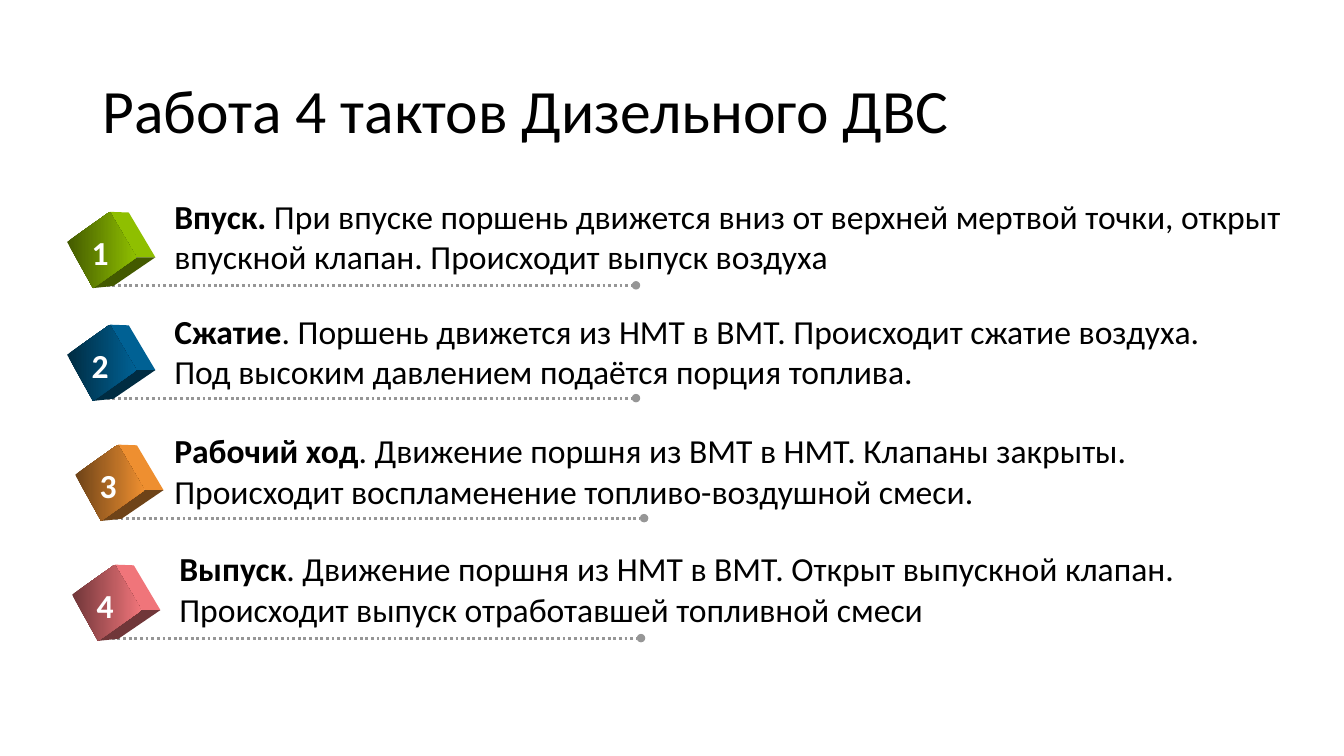
import pptx
import pptx.dml.color
import pptx.enum.dml
import pptx.enum.shapes
import pptx.enum.text
import pptx.oxml
import pptx.oxml.ns
import pptx.util

Pt = pptx.util.Pt

COLORS = {
    "text": "000000",
    "number": "FFFFFF",
    "line": "969696",
    "green": "8FBF00",
    "green dark": "435A00",
    "blue": "006194",
    "blue dark": "002C42",
    "orange": "EE8F30",
    "orange dark": "6E4318",
    "pink": "F0757A",
    "pink dark": "703639",
}

CUBE_FRONT = [(0, 22), (30.5, 0.5), (49.5, 33), (18.5, 55)]
CUBE_SIDE = [(30.5, 0.5), (44, 1), (63, 33), (49.5, 33)]
CUBE_BOTTOM = [(18.5, 55), (33, 53.5), (63, 33), (49.5, 33)]

STROKES = [
    ("green", (76.3, 203.8), (117.4, 136.1, 816.5), "Впуск. ",
     "При впуске поршень движется вниз от верхней мертвой точки, "
     "открыт впускной клапан. Происходит выпуск воздуха"),
    ("blue", (76.3, 284.4), (117.4, 218.2, 784.8), "Сжатие",
     ". Поршень движется из НМТ в ВМТ. Происходит сжатие воздуха. "
     "Под высоким давлением подаётся порция топлива."),
    ("orange", (82.1, 370.1), (117.4, 303.8, 720), "Рабочий ход",
     ". Движение поршня из ВМТ в НМТ. Клапаны закрыты. "
     "Происходит воспламенение топливо-воздушной смеси."),
    ("pink", (79.9, 455.8), (121, 388.1, 776.9), "Выпуск",
     ". Движение поршня из НМТ в ВМТ. Открыт выпускной клапан. "
     "Происходит выпуск отработавшей топливной смеси"),
]


def rgb(name):
    return pptx.dml.color.RGBColor.from_string(COLORS[name])


def add_text(slide, runs, left, top, width, height, size=24, color="text",
             anchor="TOP", spacing=1.0, wrap=True):
    shape = slide.shapes.add_textbox(Pt(left), Pt(top), Pt(width), Pt(height))
    frame = shape.text_frame
    frame.word_wrap = wrap
    frame.vertical_anchor = getattr(pptx.enum.text.MSO_ANCHOR, anchor)
    paragraph = frame.paragraphs[0]
    paragraph.line_spacing = spacing
    for text, bold in runs:
        run = paragraph.add_run()
        run.text = text
        run.font.name = "Calibri"
        run.font.size = Pt(size)
        run.font.bold = bold
        run.font.color.rgb = rgb(color)


def add_face(slide, left, top, corners):
    points = [(Pt(left + x), Pt(top + y)) for x, y in corners]
    builder = slide.shapes.build_freeform(*points[0])
    builder.add_line_segments(points[1:], close=True)
    shape = builder.convert_to_shape()
    shape.shadow.inherit = False
    shape.line.fill.background()
    return shape.fill


def add_cube(slide, left, top, color):
    dark = color + " dark"
    for corners, face_color in ((CUBE_SIDE, color), (CUBE_BOTTOM, dark)):
        fill = add_face(slide, left, top, corners)
        fill.solid()
        fill.fore_color.rgb = rgb(face_color)
    fill = add_face(slide, left, top, CUBE_FRONT)
    fill.gradient()
    fill.gradient_angle = 0
    for stop, stop_color in zip(fill.gradient_stops, (dark, color)):
        stop.color.rgb = rgb(stop_color)


def add_dotted_line(slide, left, top, length):
    connector = slide.shapes.add_connector(
        pptx.enum.shapes.MSO_CONNECTOR.STRAIGHT,
        Pt(left), Pt(top), Pt(left + length), Pt(top))
    connector.line.color.rgb = rgb("line")
    connector.line.width = Pt(2)
    connector.line.dash_style = pptx.enum.dml.MSO_LINE.ROUND_DOT
    tail = pptx.oxml.parse_xml(
        f'<a:tailEnd {pptx.oxml.ns.nsdecls("a")} type="oval"/>')
    connector.line._get_or_add_ln().append(tail)
    effects = pptx.oxml.parse_xml(
        f'<a:effectLst {pptx.oxml.ns.nsdecls("a")}/>')
    connector._element.spPr.append(effects)


def add_stroke(slide, number, color, line_start, text_box, name, description):
    line_left, line_top = line_start
    text_left, text_top, text_width = text_box
    add_dotted_line(slide, line_left, line_top, 378)
    add_cube(slide, line_left - 28.3, line_top - 53, color)
    add_text(slide, [(name, True), (description, False)],
             text_left, text_top, text_width, 65.5)
    add_text(slide, [(str(number), True)], line_left - 18, line_top - 41.8,
             28, 36, color="number", wrap=False)


def main():
    presentation = pptx.Presentation()
    presentation.slide_width = Pt(960)
    presentation.slide_height = Pt(540)
    slide = presentation.slides.add_slide(presentation.slide_layouts[6])
    add_text(slide, [("Работа 4 тактов Дизельного ДВС", False)],
             66, 28.8, 828, 104.4, size=44, anchor="MIDDLE", spacing=0.9)
    for number, stroke in enumerate(STROKES, 1):
        add_stroke(slide, number, *stroke)
    presentation.save("out.pptx")


if __name__ == "__main__":
    main()
